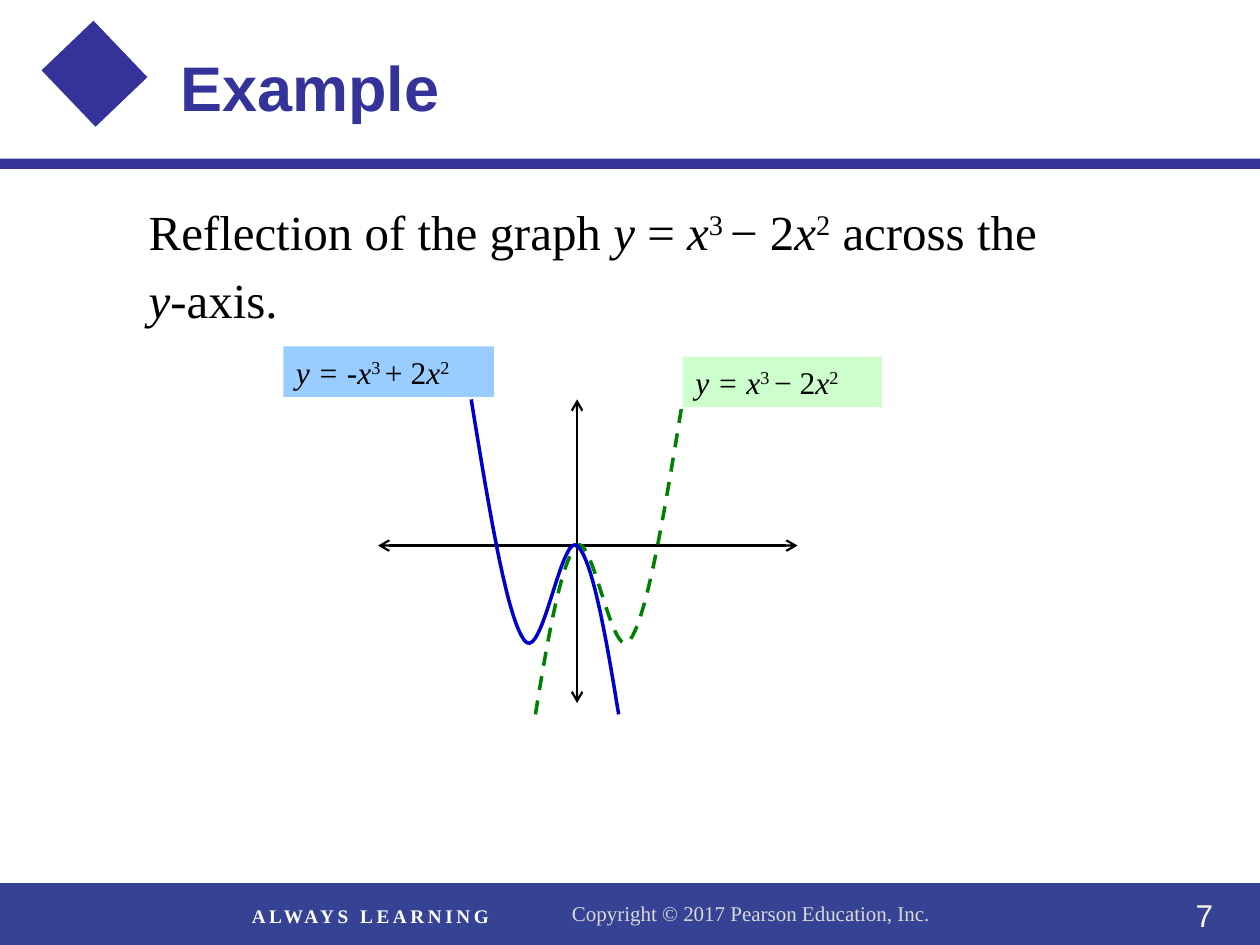
from dataclasses import dataclass

from lxml import etree
from pptx import Presentation
from pptx import util as u
from pptx.dml.color import RGBColor
from pptx.enum import dml, shapes, text
from pptx.oxml import ns


@dataclass(frozen=True)
class Theme:
    serif: str = "Times New Roman"
    sans: str = "Arial"
    navy: str = "333399"
    footer: str = "364395"
    copyright: str = "D9D9D9"
    number: str = "FBF5EA"
    white: str = "FFFFFF"
    black: str = "000000"
    green: str = "008000"
    blue: str = "0000CC"
    pale_green: str = "CCFFCC"
    pale_blue: str = "99CCFF"
    title_size: int = 36
    body_size: int = 28
    label_size: int = 18
    copyright_size: int = 12
    slogan_size: int = 11


def inches(*values):
    return [u.Inches(value) for value in values]


def bezier(start, segments, steps=20):
    points = [start]
    for first, second, end in segments:
        begin = points[-1]
        for step in range(1, steps + 1):
            t = step / steps
            weights = ((1 - t) ** 3, 3 * t * (1 - t) ** 2, 3 * t * t * (1 - t), t ** 3)
            points.append(tuple(
                sum(weight * value for weight, value in zip(weights, values))
                for values in zip(begin, first, second, end)
            ))
    return points


class SlideBuilder:
    def __init__(self, slide, theme):
        self.slide = slide
        self.theme = theme

    def add_runs(self, paragraph, runs, size, color, font=None, bold=False, spacing=None):
        for content, style in runs:
            run = paragraph.add_run()
            run.text = content
            run.font.name = font or self.theme.serif
            run.font.size = u.Pt(size)
            run.font.color.rgb = RGBColor.from_string(color)
            run.font.bold = bold
            run.font.italic = "i" in style
            properties = run.font._element
            if "^" in style:
                properties.set("baseline", "30000")
            if spacing:
                properties.set("spc", str(spacing * 100))

    def place(self, shape, box):
        shape.left, shape.top, shape.width, shape.height = inches(*box)

    def title(self, content, box):
        shape = self.slide.shapes.title
        self.place(shape, box)
        frame = shape.text_frame
        frame.auto_size = text.MSO_AUTO_SIZE.NONE
        frame.vertical_anchor = text.MSO_ANCHOR.MIDDLE
        paragraph = frame.paragraphs[0]
        paragraph.alignment = text.PP_ALIGN.LEFT
        theme = self.theme
        self.add_runs(paragraph, [(content, "")], theme.title_size, theme.navy, theme.sans, True)

    def body(self, paragraphs, box):
        shape = self.slide.placeholders[1]
        self.place(shape, box)
        frame = shape.text_frame
        frame.auto_size = text.MSO_AUTO_SIZE.NONE
        frame.margin_right = 0
        for index, runs in enumerate(paragraphs):
            paragraph = frame.add_paragraph() if index else frame.paragraphs[0]
            properties = paragraph._p.get_or_add_pPr()
            properties.set("marL", "0")
            properties.set("indent", "0")
            etree.SubElement(properties, ns.qn("a:buNone"))
            paragraph.line_spacing = 1.1
            paragraph.space_before = u.Pt(2 if index else 0)
            self.add_runs(paragraph, runs, self.theme.body_size, self.theme.black)

    def rectangle(self, box, fill, rotation=0):
        shape = self.slide.shapes.add_shape(shapes.MSO_SHAPE.RECTANGLE, *inches(*box))
        shape.shadow.inherit = False
        shape.fill.solid()
        shape.fill.fore_color.rgb = RGBColor.from_string(fill)
        shape.line.fill.background()
        shape.rotation = rotation
        return shape

    def label(self, runs, box, fill):
        frame = self.rectangle(box, fill).text_frame
        frame.vertical_anchor = text.MSO_ANCHOR.MIDDLE
        paragraph = frame.paragraphs[0]
        paragraph.alignment = text.PP_ALIGN.LEFT
        self.add_runs(paragraph, runs, self.theme.label_size, self.theme.black)

    def caption(self, content, box, size, color, **style):
        frame = self.slide.shapes.add_textbox(*inches(*box)).text_frame
        frame.word_wrap = True
        self.add_runs(frame.paragraphs[0], [(content, "")], size, color, **style)

    def axis(self, start, end):
        connector = self.slide.shapes.add_connector(
            shapes.MSO_CONNECTOR.STRAIGHT, *inches(*start, *end))
        connector.line.color.rgb = RGBColor.from_string(self.theme.black)
        connector.line.width = u.Pt(1.25)
        line = connector.line._get_or_add_ln()
        for tag in ("a:headEnd", "a:tailEnd"):
            etree.SubElement(line, ns.qn(tag), type="arrow")
        etree.SubElement(connector._element.spPr, ns.qn("a:effectLst"))

    def curve(self, points, color, dashed=False):
        first, *rest = [tuple(inches(*point)) for point in points]
        builder = self.slide.shapes.build_freeform(*first)
        builder.add_line_segments(rest, close=False)
        shape = builder.convert_to_shape()
        shape.shadow.inherit = False
        shape.fill.background()
        shape.line.color.rgb = RGBColor.from_string(color)
        shape.line.width = u.Pt(2)
        if dashed:
            shape.line.dash_style = dml.MSO_LINE.DASH


def main():
    presentation = Presentation()
    presentation.slide_width, presentation.slide_height = inches(10, 7.5)
    slide = presentation.slides.add_slide(presentation.slide_layouts[1])
    theme = Theme()
    builder = SlideBuilder(slide, theme)

    builder.rectangle((0, 7.01, 10, 0.49), theme.footer)
    builder.caption("Copyright © 2017 Pearson Education, Inc.", (4.44, 7.1, 3.31, 0.3),
                    theme.copyright_size, theme.copyright)
    builder.caption("7", (9.39, 7.06, 0.61, 0.4), theme.label_size, theme.number,
                    font=theme.sans)
    builder.caption("ALWAYS LEARNING", (1.9, 7.13, 2.3, 0.28), theme.slogan_size,
                    theme.white, bold=True, spacing=2)
    builder.rectangle((0, 1.26, 10, 0.08), theme.navy)
    builder.rectangle((0.44, 0.3, 0.62, 0.57), theme.navy, rotation=46.3)
    builder.title("Example", (1.33, 0.33, 2.5, 0.71))

    squared = [("x", "i"), ("2", "^")]
    cubic = [("x", "i"), ("3 ", "^"), ("− 2", ""), *squared]
    builder.body([
        [("Reflection of the graph ", ""), ("y", "i"), (" = ", ""), *cubic,
         (" across the", "")],
        [("y-", "i"), ("axis.", "")],
    ], (1.08, 1.5, 7.67, 4.95))
    builder.label([("y = ", "i"), *cubic], (5.42, 2.83, 1.58, 0.4), theme.pale_green)
    builder.label([("y = -x", "i"), ("3 ", "^"), ("+ 2", ""), *squared],
                  (2.25, 2.75, 1.67, 0.4), theme.pale_blue)

    origin_x, origin_y = 4.58, 4.33
    builder.axis((origin_x, 5.58), (origin_x, 3.17))
    builder.axis((3, origin_y), (6.33, origin_y))

    graph = bezier((4.25, 5.67), [
        ((4.35, 5.05), (4.46, 4.43), (origin_x, origin_y)),
        ((4.71, 4.24), (4.86, 5.28), (5, 5.08)),
        ((5.14, 4.89), (5.28, 4.03), (5.42, 3.17)),
    ])
    reflection = [(2 * origin_x - x, y) for x, y in graph]
    builder.curve(graph, theme.green, dashed=True)
    builder.curve(reflection, theme.blue)

    presentation.save("out.pptx")


if __name__ == "__main__":
    main()
